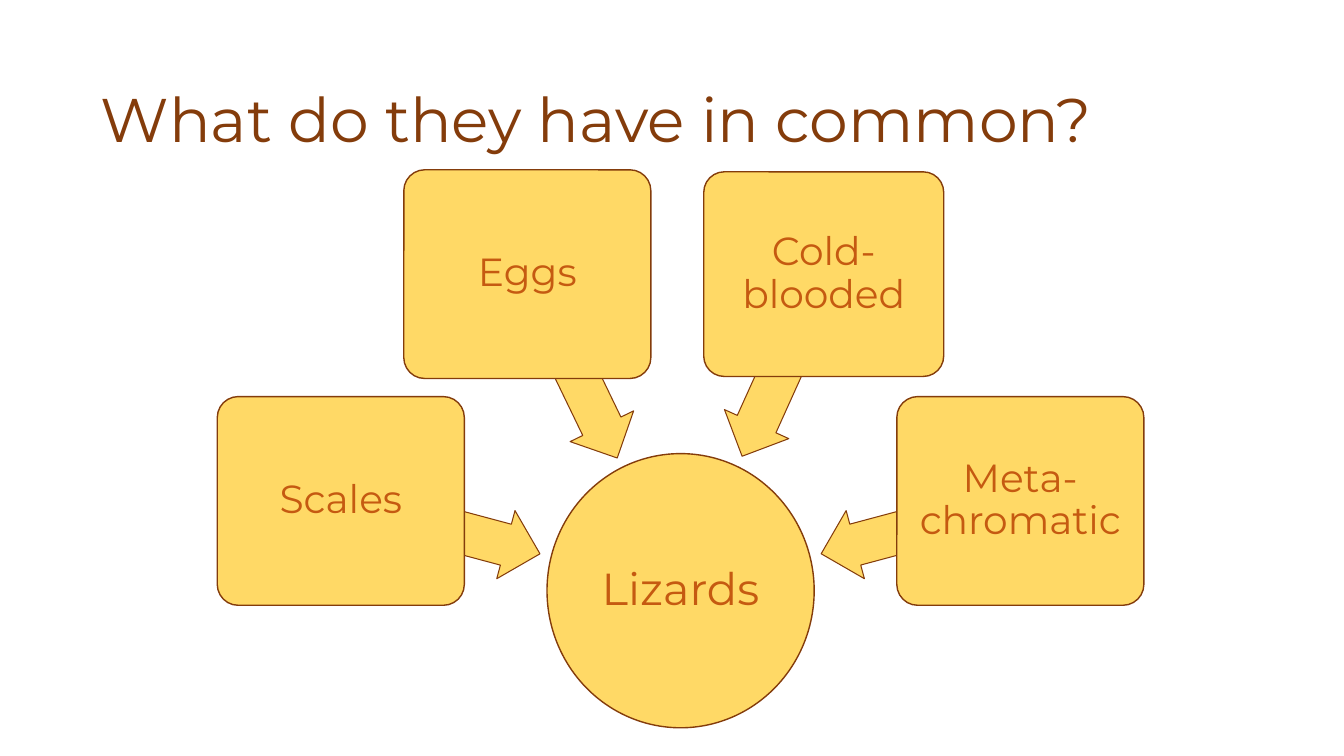
from dataclasses import dataclass

from pptx import Presentation, util as u
from pptx.dml.color import RGBColor
from pptx.enum import shapes, text


@dataclass(frozen=True)
class Theme:
    font: str = "Montserrat"
    heading: str = "843C0B"
    outline: str = "843C0B"
    fill: str = "FFD966"
    label: str = "C55A11"
    title_size: int = 44
    hub_size: int = 32
    trait_size: int = 28
    line_spacing: float = 0.9


class TraitSlide:
    """Draws on a grid whose columns and rows are each one inch."""
    COLUMNS, ROWS = 13.33, 7.5

    def __init__(self, theme):
        self.theme = theme
        self.prs = Presentation()
        self.prs.slide_width = u.Inches(self.COLUMNS)
        self.prs.slide_height = u.Inches(self.ROWS)
        self.s = self.prs.slides.add_slide(self.prs.slide_layouts[5])

    def x(self, columns):
        return round(self.prs.slide_width * columns / self.COLUMNS)

    def y(self, rows):
        return round(self.prs.slide_height * rows / self.ROWS)

    def set_text(self, sp, words, size, color, align, frame):
        tf = sp.text_frame
        for name, value in {"word_wrap": True, **frame}.items():
            setattr(tf, name, value)
        p = tf.paragraphs[0]
        p.alignment, p.line_spacing = align, self.theme.line_spacing
        r = p.add_run()
        r.text = words
        for name, value in {"name": self.theme.font, "size": u.Pt(size), "bold": False}.items():
            setattr(r.font, name, value)
        r.font.color.rgb = RGBColor.from_string(color)

    def title(self, words, left, top, width, height):
        sp = self.s.shapes.title
        box = {"left": self.x(left), "top": self.y(top),
               "width": self.x(width), "height": self.y(height)}
        for name, value in box.items():
            setattr(sp, name, value)
        self.set_text(sp, words, self.theme.title_size, self.theme.heading, text.PP_ALIGN.LEFT,
                      {"vertical_anchor": text.MSO_ANCHOR.TOP,
                       "auto_size": text.MSO_AUTO_SIZE.NONE})

    def shape(self, kind, center, size, weight=1, adjust=(), rotation=0):
        (cx, cy), (width, height) = center, size
        sp = self.s.shapes.add_shape(kind, self.x(cx - width / 2), self.y(cy - height / 2),
                                     self.x(width), self.y(height))
        sp.shadow.inherit = False
        sp.rotation = rotation
        for i, value in enumerate(adjust):
            sp.adjustments[i] = value
        sp.fill.solid()
        sp.fill.fore_color.rgb = RGBColor.from_string(self.theme.fill)
        sp.line.color.rgb = RGBColor.from_string(self.theme.outline)
        sp.line.width = u.Pt(weight)
        return sp

    def label(self, sp, words, size, inset):
        frame = {f"margin_{side}": u.Inches(inset) for side in ("left", "right", "top", "bottom")}
        frame["vertical_anchor"] = text.MSO_ANCHOR.MIDDLE
        self.set_text(sp, words, size, self.theme.label, text.PP_ALIGN.CENTER, frame)

    def hub(self, words, center, size):
        sp = self.shape(shapes.MSO_SHAPE.OVAL, center, size)
        self.label(sp, words, self.theme.hub_size, 0.02)

    def trait(self, words, center, size):
        sp = self.shape(shapes.MSO_SHAPE.ROUNDED_RECTANGLE, center, size, adjust=(0.1,))
        self.label(sp, words, self.theme.trait_size, 0.06)

    def arrow(self, center, length, rotation):
        self.shape(shapes.MSO_SHAPE.LEFT_ARROW, center, (length, 0.7), 0.75, (0.6, 0.5), rotation)


AXIS = 6.75
WIDE, NARROW = (2.45, 2.07), (2.38, 2.03)
# words, box offset from the axis, box row, box size, arrow offset, arrow row, length, rotation
TRAITS = [
    ("Scales", -3.37, 4.97, WIDE, -2.38, 5.23, 2.04, 195),
    ("Eggs", -1.52, 2.72, WIDE, -1.07, 3.63, 2.03, 244.2),
    ("Cold-blooded", 1.42, 2.72, NARROW, 1.02, 3.62, 1.99, 294.3),
    ("Meta-chromatic", 3.37, 4.97, WIDE, 2.38, 5.23, 2.04, 345),
]


def main():
    slide = TraitSlide(Theme())
    slide.title("What do they have in common?", 0.9, 0.84, 11.51, 1.43)
    slide.hub("Lizards", (AXIS, 5.86), (2.65, 2.72))
    for words, dx, row, size, arrow_dx, arrow_row, length, rotation in TRAITS:
        slide.arrow((AXIS + arrow_dx, arrow_row), length, rotation)
        slide.trait(words, (AXIS + dx, row), size)
    slide.prs.save("out.pptx")


if __name__ == "__main__":
    main()
